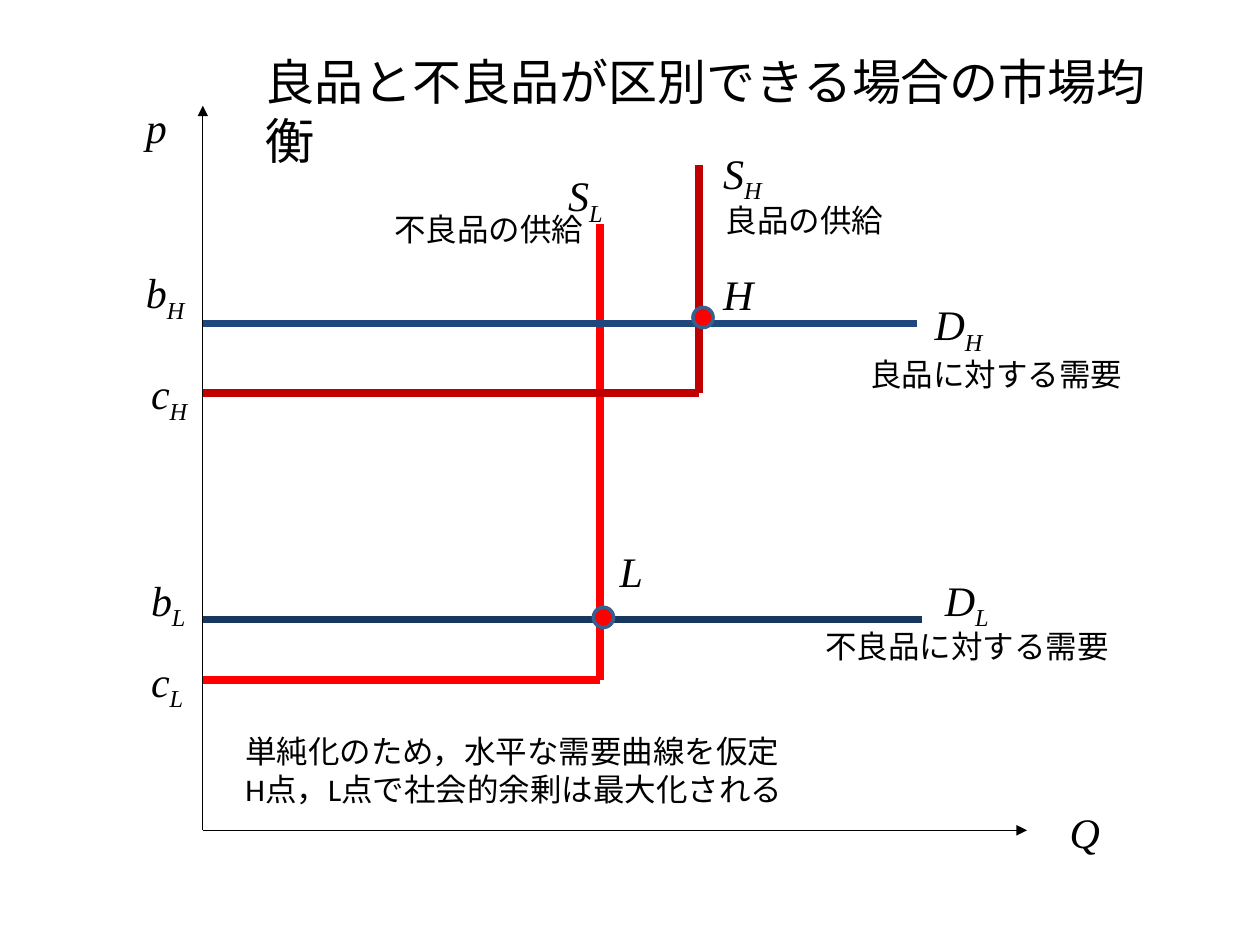
from lxml.etree import SubElement
from pptx import Presentation
from pptx.dml.color import RGBColor
from pptx.enum.lang import MSO_LANGUAGE_ID as Language
from pptx.enum.shapes import MSO_CONNECTOR as Connector, MSO_SHAPE as Shape
from pptx.enum.text import MSO_ANCHOR as Anchor, MSO_AUTO_SIZE as AutoSize, PP_ALIGN as Align
from pptx.oxml.ns import qn
from pptx.util import Inches, Pt

COLUMNS = 100
BLACK, RED, DARK_RED = "000000", "FF0000", "C00000"
AXIS_LEFT, AXIS_BOTTOM = 16.1, 65.9
TITLE = ("良品と不良品が区別できる場合の市場均衡", 20.1, 3.6, 75.6, 5.7)

AXIS_ENDS = [(81.5, AXIS_BOTTOM), (AXIS_LEFT, 8.4)]
SUPPLIES = [
    {"cost": 54, "quantity": 47.6, "top": 17.8, "color": RED},
    {"cost": 31.2, "quantity": 55.5, "top": 13.1, "color": DARK_RED},
]
DEMANDS = [
    {"benefit": 49.2, "right": 73.2, "color": "17375E"},
    {"benefit": 25.7, "right": 72.8, "color": "1F497D"},
]
EQUILIBRIA = [(55.8, 25.2), (47.9, 49)]
DOT_SIZE = 1.6

SYMBOL_HEIGHT = 5
SYMBOLS = [
    ("p", 10.6, 7.6, 3.9),
    ("Q", 83.9, 63.5, 5.5),
    ("S_L", 44.1, 13, 5.5),
    ("S_H", 56.4, 11.2, 5.5),
    ("D_L", 74, 45.1, 6.3),
    ("D_H", 73.2, 23.2, 8.7),
    ("c_H", 11, 28.7, 5.5),
    ("c_L", 11, 51.5, 5.5),
    ("b_H", 10.6, 20.7, 5.5),
    ("b_L", 11, 45.1, 5.5),
    ("H", 56.4, 20.8, 4),
    ("L", 48.2, 42.8, 4),
]
CAPTION_HEIGHT = 4
CAPTIONS = [
    ("良品に対する需要", 68.1, 27.7, 24.4),
    ("不良品に対する需要", 64.5, 49.3, 26),
    ("良品の供給", 56.6, 15.5, 20.5),
    ("不良品の供給", 30.3, 16.2, 17.3),
]
NOTE = ("単純化のため，水平な需要曲線を仮定\nH点，L点で社会的余剰は最大化される", 18.5, 57.6, 48.3, 7.1)

presentation = Presentation()
presentation.slide_width, presentation.slide_height = Inches(10), Inches(7.5)
slide = presentation.slides.add_slide(presentation.slide_layouts[5])


def grid(*lengths):
    return [round(length * presentation.slide_width / COLUMNS) for length in lengths]


def rgb(color):
    return RGBColor.from_string(color)


def add_text(text, left, top, width, height, shape=None, size=18, font="Arial", italic=False):
    box = grid(left, top, width, height)
    shape = shape or slide.shapes.add_textbox(*box)
    shape.left, shape.top, shape.width, shape.height = box
    frame = shape.text_frame
    frame.word_wrap = True
    frame.auto_size = AutoSize.NONE
    frame.vertical_anchor = Anchor.TOP
    for index, line in enumerate(text.split("\n")):
        paragraph = frame.add_paragraph() if index else frame.paragraphs[0]
        paragraph.alignment = Align.LEFT
        for position, part in enumerate(line.split("_")):
            run = paragraph.add_run()
            run.text = part
            run.font.size = Pt(size)
            run.font.name = font
            run.font.italic = italic
            run.font.color.rgb = rgb(BLACK)
            run.font.language_id = Language.JAPANESE
            if position:
                run.font._element.set("baseline", "-25000")


def add_line(start, end, color, width, arrow=False):
    line = slide.shapes.add_connector(Connector.STRAIGHT, *grid(*start, *end))
    line.line.color.rgb = rgb(color)
    line.line.width = Pt(width)
    if arrow:
        SubElement(line.line._get_or_add_ln(), qn("a:tailEnd"), type="triangle")
    SubElement(line._element.spPr, qn("a:effectLst"))


def add_dot(center_x, center_y):
    dot = slide.shapes.add_shape(
        Shape.OVAL, *grid(center_x - DOT_SIZE / 2, center_y - DOT_SIZE / 2, DOT_SIZE, DOT_SIZE))
    dot.shadow.inherit = False
    dot.fill.solid()
    dot.fill.fore_color.rgb = rgb(RED)
    dot.line.color.rgb = rgb("3A5F8C")
    dot.line.width = Pt(2)


add_text(*TITLE, shape=slide.shapes.title, size=28)

for end in AXIS_ENDS:
    add_line((AXIS_LEFT, AXIS_BOTTOM), end, BLACK, 0.75, arrow=True)

for supply in SUPPLIES:
    corner = (supply["quantity"], supply["cost"])
    add_line((AXIS_LEFT, supply["cost"]), corner, supply["color"], 4.5)
    add_line(corner, (supply["quantity"], supply["top"]), supply["color"], 4.5)

for demand in DEMANDS:
    level = demand["benefit"]
    add_line((AXIS_LEFT, level), (demand["right"], level), demand["color"], 4)

for point in EQUILIBRIA:
    add_dot(*point)

for symbol in SYMBOLS:
    add_text(*symbol, SYMBOL_HEIGHT, size=24, font="Times New Roman", italic=True)

for caption in CAPTIONS:
    add_text(*caption, CAPTION_HEIGHT)

add_text(*NOTE, font="Calibri")

presentation.save("out.pptx")
